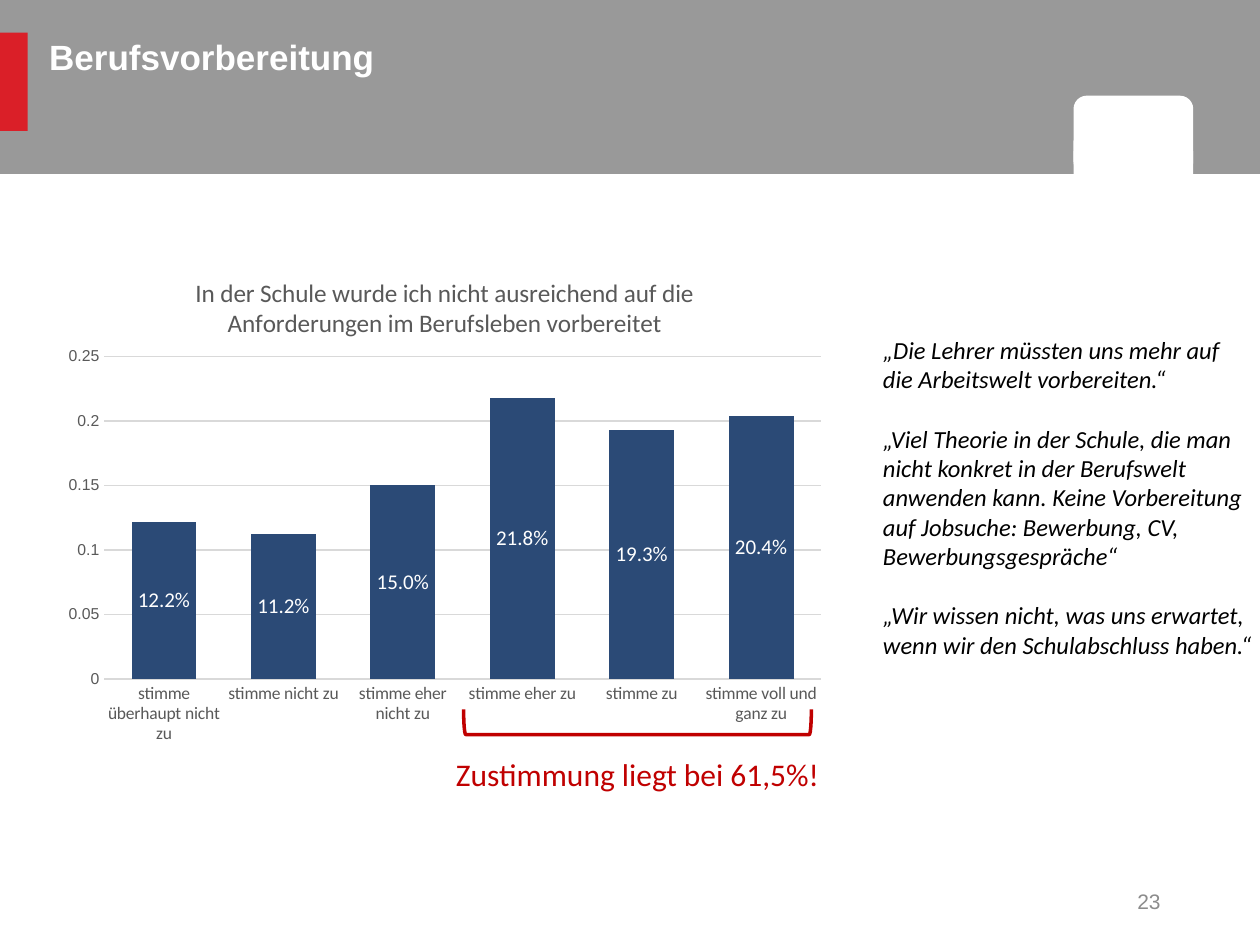
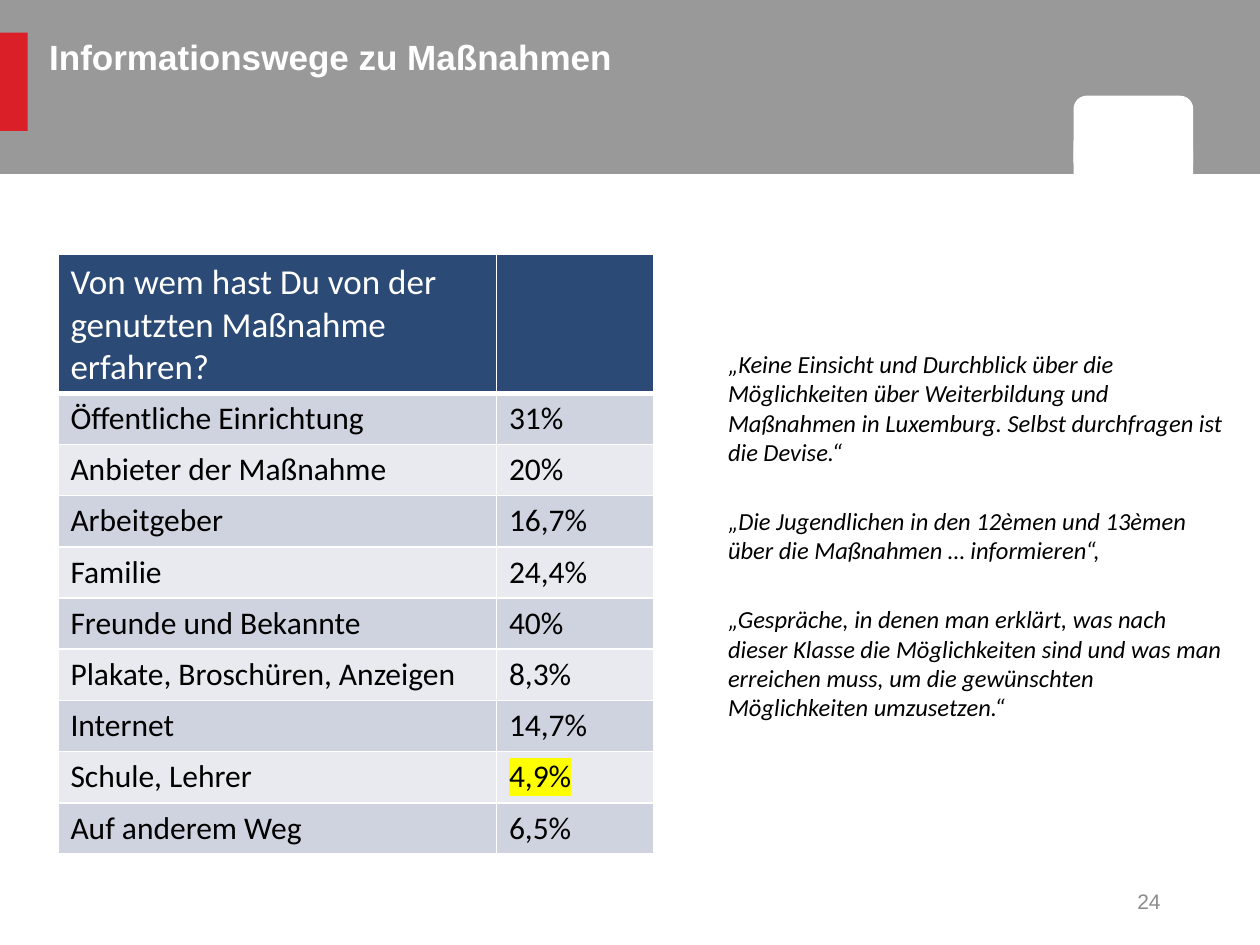
from lxml import etree
from pptx import Presentation
from pptx.chart.data import CategoryChartData
from pptx.dml.color import RGBColor
from pptx.enum.chart import XL_CHART_TYPE, XL_LABEL_POSITION, XL_TICK_MARK
from pptx.enum.shapes import MSO_SHAPE
from pptx.enum.text import MSO_ANCHOR, PP_ALIGN
from pptx.oxml import parse_xml
from pptx.oxml.ns import nsdecls, qn
from pptx.util import Inches, Pt

RECTANGLE = MSO_SHAPE.RECTANGLE
ROUNDED = MSO_SHAPE.ROUNDED_RECTANGLE
BRACKET = MSO_SHAPE.LEFT_BRACKET
TOP, MIDDLE = MSO_ANCHOR.TOP, MSO_ANCHOR.MIDDLE
LEFT, RIGHT = PP_ALIGN.LEFT, PP_ALIGN.RIGHT
COLUMNS = XL_CHART_TYPE.COLUMN_CLUSTERED
CENTER_LABEL = XL_LABEL_POSITION.CENTER
NO_TICK = XL_TICK_MARK.NONE

BLUE, RED, DARK_RED = "2B4A76", "DA1F28", "C00000"
WHITE, BLACK, BAND_GRAY = "FFFFFF", "000000", "999999"
TEXT_GRAY, LINE_GRAY, NUMBER_GRAY = "595959", "D9D9D9", "8C8C8C"
ROW_FILLS = ["E8EAEF", "CED3DF"]

HEADER_PARTS = [
    (RECTANGLE, 0, 0, 10, 1.38, BAND_GRAY),
    (RECTANGLE, 0, 0.26, 0.22, 0.78, RED),
    (ROUNDED, 8.52, 0.76, 0.95, 0.63, WHITE),
    (RECTANGLE, 8.52, 1.2, 0.95, 0.19, WHITE),
]
SLIDE_TITLES = {23: "Berufsvorbereitung", 24: "Informationswege zu Maßnahmen"}


def rgb(value):
    return RGBColor.from_string(value)


def add_text(slide, box, texts, size, color, font="Calibri", bold=False, italic=False,
             align=LEFT, anchor=TOP, inset=True, gap=0):
    shape = slide.shapes.add_textbox(*[Inches(length) for length in box])
    text_frame = shape.text_frame
    text_frame.word_wrap = True
    text_frame.vertical_anchor = anchor
    if not inset:
        text_frame.margin_left = text_frame.margin_right = 0
        text_frame.margin_top = text_frame.margin_bottom = 0
    text_frame.text = "\n".join(texts)
    for index, paragraph in enumerate(text_frame.paragraphs):
        paragraph.alignment = align
        if index:
            paragraph.space_before = Pt(gap)
        run_font = paragraph.runs[0].font
        run_font.name, run_font.size = font, Pt(size)
        run_font.bold, run_font.italic = bold, italic
        run_font.color.rgb = rgb(color)


presentation = Presentation()
presentation.slide_width, presentation.slide_height = Inches(10), Inches(7.5)

slides = []
for number, title in SLIDE_TITLES.items():
    slide = presentation.slides.add_slide(presentation.slide_layouts[6])
    slides.append(slide)
    for kind, left, top, width, height, color in HEADER_PARTS:
        shape = slide.shapes.add_shape(kind, Inches(left), Inches(top), Inches(width), Inches(height))
        shape.shadow.inherit = False
        shape.fill.solid()
        shape.fill.fore_color.rgb = rgb(color)
        shape.line.fill.background()
    add_text(slide, (7.06, 6.95, 2.25, 0.4), [str(number)], 12, NUMBER_GRAY, "Arial",
             align=RIGHT, anchor=MIDDLE)
    add_text(slide, (0.39, 0.28, 8.11, 0.83), [title], 20, WHITE, "Arial", bold=True, inset=False)

preparation_slide, channels_slide = slides

add_text(preparation_slide, (6.91, 2.61, 3.13, 3.23), [
    "„Die Lehrer müssten uns mehr auf die Arbeitswelt vorbereiten.“",
    "„Viel Theorie in der Schule, die man nicht konkret in der Berufswelt anwenden kann. "
    "Keine Vorbereitung auf Jobsuche: Bewerbung, CV, Bewerbungsgespräche“",
    "„Wir wissen nicht, was uns erwartet, wenn wir den Schulabschluss haben.“",
], 14, BLACK, italic=True, gap=17)
add_text(preparation_slide, (3.52, 5.94, 3.39, 0.4), ["Zustimmung liegt bei 61,5%!"], 18, DARK_RED)

chart_data = CategoryChartData()
chart_data.categories = ["stimme überhaupt nicht zu", "stimme nicht zu", "stimme eher nicht zu",
                         "stimme eher zu", "stimme zu", "stimme voll und ganz zu"]
chart_data.add_series("Series 1", [0.122, 0.112, 0.15, 0.218, 0.193, 0.204])
chart = preparation_slide.shapes.add_chart(
    COLUMNS, Inches(0.39), Inches(1.99), Inches(6.25), Inches(4), chart_data).chart
chart.has_legend = False
chart.font.name, chart.font.size = "Arial", Pt(10)
chart.font.color.rgb = rgb(BLACK)

chart.has_title = True
title_frame = chart.chart_title.text_frame
title_frame.text = "In der Schule wurde ich nicht ausreichend auf die Anforderungen im Berufsleben vorbereitet"
title_font = title_frame.paragraphs[0].runs[0].font
title_font.name, title_font.size, title_font.bold = "Calibri", Pt(14.4), False
title_font.color.rgb = rgb(TEXT_GRAY)

plot = chart.plots[0]
plot.gap_width, plot.overlap = 84, -27
plot.vary_by_categories = False
series = plot.series[0]
series.format.fill.solid()
series.format.fill.fore_color.rgb = rgb(BLUE)
labels = series.data_labels
labels.show_value = True
labels.position = CENTER_LABEL
labels.number_format, labels.number_format_is_linked = "0.0%", False
labels.font.name, labels.font.size = "Calibri", Pt(12)
labels.font.color.rgb = rgb(WHITE)

value_axis, category_axis = chart.value_axis, chart.category_axis
for axis, font, size in ((category_axis, "Calibri", 10), (value_axis, "Arial", 9)):
    axis.major_tick_mark = axis.minor_tick_mark = NO_TICK
    axis.tick_labels.font.name, axis.tick_labels.font.size = font, Pt(size)
    axis.tick_labels.font.color.rgb = rgb(TEXT_GRAY)
value_axis.minimum_scale, value_axis.maximum_scale, value_axis.major_unit = 0, 0.25, 0.05
value_axis.format.line.fill.background()
for line in (category_axis.format.line, value_axis.major_gridlines.format.line):
    line.color.rgb = rgb(LINE_GRAY)
    line.width = Pt(0.75)

plot_area = chart._chartSpace.chart.plotArea
title_element = chart.chart_title._element
for old_layout in plot_area.findall(qn("c:layout")) + title_element.findall(qn("c:layout")):
    old_layout.getparent().remove(old_layout)
layouts = [
    (plot_area, 0, {"layoutTarget": "inner", "xMode": "edge", "yMode": "edge",
                    "x": 0.07, "y": 0.21, "w": 0.91, "h": 0.64}),
    (title_element, 1, {"xMode": "edge", "yMode": "edge", "x": 0.18, "y": 0.04}),
]
for parent, position, settings in layouts:
    layout = parse_xml(f"<c:layout {nsdecls('c')}><c:manualLayout/></c:layout>")
    for name, value in settings.items():
        etree.SubElement(layout[0], qn(f"c:{name}")).set("val", str(value))
    parent.insert(position, layout)

bracket = preparation_slide.shapes.add_shape(BRACKET, Inches(4.96), Inches(4.35), Inches(0.2), Inches(2.76))
bracket.rotation = 270
bracket.shadow.inherit = False
bracket.fill.background()
bracket.line.color.rgb = rgb(DARK_RED)
bracket.line.width = Pt(2)

add_text(channels_slide, (5.68, 2.72, 4.17, 3.52), [
    "„Keine Einsicht und Durchblick über die Möglichkeiten über Weiterbildung und Maßnahmen "
    "in Luxemburg. Selbst durchfragen ist die Devise.“",
    "„Die Jugendlichen in den 12èmen und 13èmen über die Maßnahmen … informieren“,",
    "„Gespräche, in denen man erklärt, was nach dieser Klasse die Möglichkeiten sind und was man "
    "erreichen muss, um die gewünschten Möglichkeiten umzusetzen.“",
], 14, BLACK, italic=True, gap=22.5)

channel_rows = [
    ("Von wem hast Du von der genutzten Maßnahme erfahren?", ""),
    ("Öffentliche Einrichtung", "31%"),
    ("Anbieter der Maßnahme", "20%"),
    ("Arbeitgeber", "16,7%"),
    ("Familie", "24,4%"),
    ("Freunde und Bekannte", "40%"),
    ("Plakate, Broschüren, Anzeigen", "8,3%"),
    ("Internet", "14,7%"),
    ("Schule, Lehrer", "4,9%"),
    ("Auf anderem Weg", "6,5%"),
]
highlighted = "4,9%"
table_height, header_height = 4.75, 1.09
body_height = (table_height - header_height) / (len(channel_rows) - 1)
table = channels_slide.shapes.add_table(
    len(channel_rows), 2, Inches(0.46), Inches(2.02), Inches(4.73), Inches(table_height)).table
table.first_row = table.horz_banding = False
table.columns[0].width, table.columns[1].width = Inches(3.48), Inches(1.25)

for row_index, texts in enumerate(channel_rows):
    is_header = row_index == 0
    table.rows[row_index].height = Inches(header_height if is_header else body_height)
    for column_index, text in enumerate(texts):
        cell = table.cell(row_index, column_index)
        cell_properties = cell._tc.get_or_add_tcPr()
        for side in "LRTB":
            is_heavy = (row_index, side) in ((0, "B"), (1, "T"))
            cell_properties.append(parse_xml(
                f'<a:ln{side} {nsdecls("a")} w="{Pt(3 if is_heavy else 1)}"><a:solidFill>'
                f'<a:srgbClr val="{WHITE}"/></a:solidFill></a:ln{side}>'))
        cell.fill.solid()
        cell.fill.fore_color.rgb = rgb(BLUE if is_header else ROW_FILLS[row_index % 2])
        cell.text_frame.text = text
        for run in cell.text_frame.paragraphs[0].runs:
            run.font.name, run.font.size = "Calibri", Pt(20 if is_header else 18)
            run.font.color.rgb = rgb(WHITE if is_header else BLACK)
            if text == highlighted:
                run._r.rPr.find(qn("a:latin")).addprevious(parse_xml(
                    f'<a:highlight {nsdecls("a")}><a:srgbClr val="FFFF00"/></a:highlight>'))

presentation.save("out.pptx")
